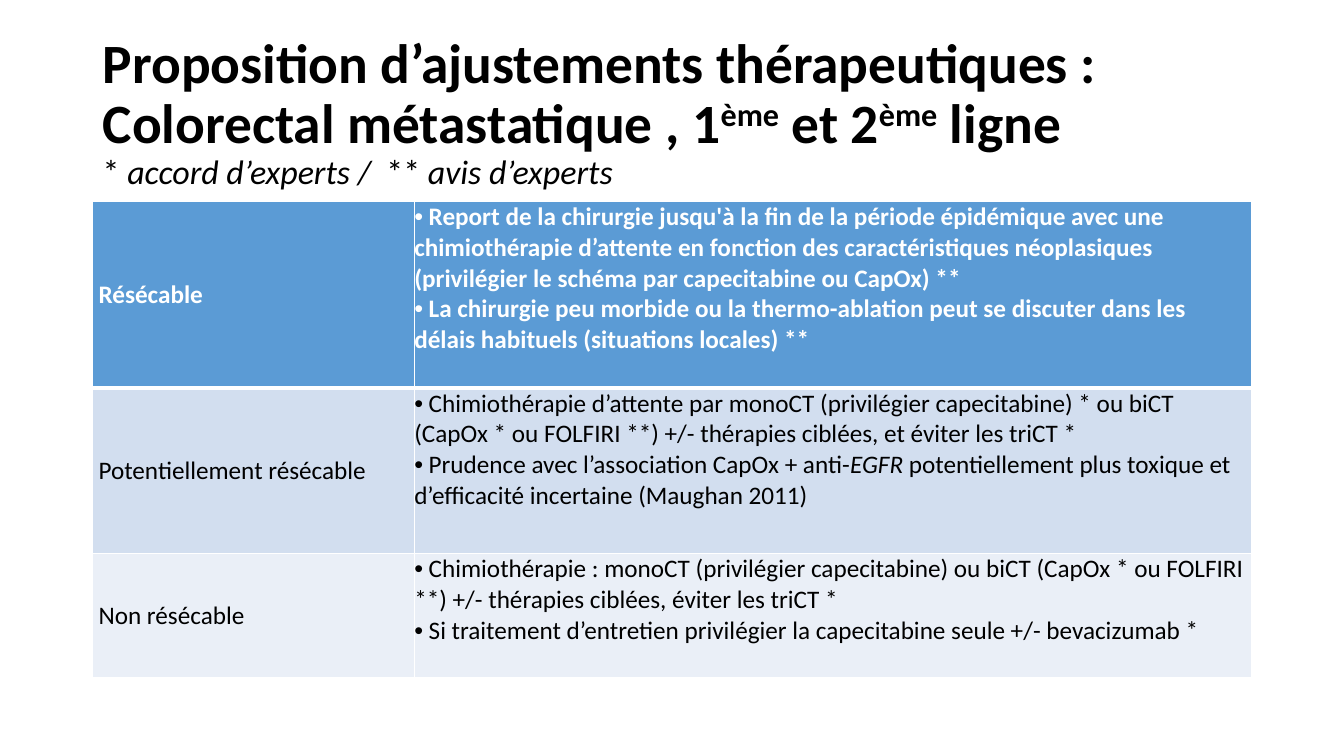
"""Build the slide on treatment adjustments for metastatic colorectal cancer."""
from lxml.etree import SubElement
from pptx import Presentation
from pptx.dml.color import RGBColor
from pptx.enum.text import MSO_ANCHOR as Anchor
from pptx.oxml.ns import qn
from pptx.util import Cm, Pt

FONT = "Calibri"
BLACK = RGBColor(0x00, 0x00, 0x00)
WHITE = RGBColor(0xFF, 0xFF, 0xFF)
BLUE = RGBColor(0x5B, 0x9B, 0xD5)
LIGHT_BLUE = RGBColor(0xD2, 0xDE, 0xEF)
PALE_BLUE = RGBColor(0xEA, 0xEF, 0xF7)

PLAIN, SUPER, ITALIC = "plain", "super", "italic"

TITLE = [
    (39.6, True, [("Proposition d’ajustements thérapeutiques :", PLAIN)]),
    (39.6, True, [("Colorectal métastatique , 1", PLAIN), ("ème", SUPER),
                  (" et 2", PLAIN), ("ème", SUPER), (" ligne", PLAIN)]),
    (24.3, False, [("* ", PLAIN), ("accord d’experts /  ", ITALIC),
                   ("** ", PLAIN), ("avis d’experts", ITALIC)]),
]

SITUATIONS = [
    (" Résécable", [
        [(" Report de la chirurgie jusqu'à la fin de la période épidémique avec une "
          "chimiothérapie d’attente en fonction des caractéristiques néoplasiques "
          "(privilégier le schéma par capecitabine ou CapOx) **", PLAIN)],
        [(" La chirurgie peu morbide ou la thermo-ablation peut se discuter dans les "
          "délais habituels (situations locales) **", PLAIN)],
    ]),
    (" Potentiellement résécable", [
        [(" Chimiothérapie d’attente par monoCT (privilégier capecitabine) * ou biCT "
          "(CapOx * ou FOLFIRI **) +/- thérapies ciblées, et éviter les triCT *", PLAIN)],
        [(" Prudence avec l’association CapOx + anti-", PLAIN), ("EGFR", ITALIC),
         (" potentiellement plus toxique et d’efficacité incertaine (Maughan 2011)", PLAIN)],
    ]),
    (" Non résécable", [
        [(" Chimiothérapie : monoCT (privilégier capecitabine) ou biCT (CapOx * ou FOLFIRI "
          "**) +/- thérapies ciblées, éviter les triCT *", PLAIN)],
        [(" Si traitement d’entretien privilégier la capecitabine seule +/- bevacizumab *",
          PLAIN)],
    ]),
]
ROW_LOOKS = [(BLUE, WHITE, True), (LIGHT_BLUE, BLACK, False), (PALE_BLUE, BLACK, False)]

LEFT = Cm(2.34)
COLUMN_WIDTHS = [Cm(8.1), Cm(21.11)]
ROW_HEIGHTS = [Cm(4.7), Cm(4.17), Cm(3.12)]


def write_paragraphs(frame, paragraphs, bulleted=False, spacing=None):
    """Fill a text frame with (size, bold, colour, runs) paragraphs."""
    for index, (size, bold, colour, runs) in enumerate(paragraphs):
        paragraph = frame.add_paragraph() if index else frame.paragraphs[0]
        if spacing:
            paragraph.line_spacing = spacing
        if bulleted:
            properties = paragraph._p.get_or_add_pPr()
            properties.set("marL", "0")
            properties.set("indent", "0")
            SubElement(properties, qn("a:buFont"), typeface="Arial")
            SubElement(properties, qn("a:buChar"), char="•")
        font = paragraph.font
        font.name, font.size, font.bold = FONT, Pt(size), bold
        font.color.rgb = colour
        for text, mark in runs:
            run = paragraph.add_run()
            run.text = text
            if mark == ITALIC:
                run.font.italic = True
            elif mark == SUPER:
                run.font._element.set("baseline", "30000")


def draw_borders(cell, widths):
    """Give a cell white borders, with widths in points by side."""
    properties = cell._tc.get_or_add_tcPr()
    for side, width in widths.items():
        line = SubElement(properties, qn(f"a:ln{side}"), w=str(Pt(width)))
        SubElement(SubElement(line, qn("a:solidFill")), qn("a:srgbClr"), val=str(WHITE))


def add_title(slide):
    """Add the three-line heading."""
    frame = slide.shapes.add_textbox(LEFT, Cm(1.02), Cm(26.16), Cm(3.68)).text_frame
    frame.word_wrap = True
    frame.vertical_anchor = Anchor.MIDDLE
    write_paragraphs(frame, [(size, bold, BLACK, runs) for size, bold, runs in TITLE],
                     spacing=0.9)


def add_situations(slide):
    """Add the table of situations and their adjustments."""
    table = slide.shapes.add_table(
        len(SITUATIONS), len(COLUMN_WIDTHS), LEFT, Cm(5.08),
        sum(COLUMN_WIDTHS), sum(ROW_HEIGHTS)).table
    for column, width in zip(table.columns, COLUMN_WIDTHS):
        column.width = width
    for index, (situation, adjustments) in enumerate(SITUATIONS):
        table.rows[index].height = ROW_HEIGHTS[index]
        fill, colour, bold = ROW_LOOKS[index]
        borders = {"L": 1, "R": 1, "T": 3 if index == 1 else 1, "B": 3 if index == 0 else 1}
        columns = [([[(situation, PLAIN)]], Anchor.MIDDLE, False),
                   (adjustments, Anchor.TOP, True)]
        for cell, (lines, anchor, bulleted) in zip(table.rows[index].cells, columns):
            cell.margin_left = cell.margin_right = cell.margin_top = cell.margin_bottom = 0
            cell.vertical_anchor = anchor
            draw_borders(cell, borders)
            cell.fill.solid()
            cell.fill.fore_color.rgb = fill
            write_paragraphs(cell.text_frame, [(18, bold, colour, runs) for runs in lines],
                             bulleted)


def main():
    """Build and save the presentation."""
    deck = Presentation()
    deck.slide_width, deck.slide_height = Cm(33.87), Cm(19.05)
    slide = deck.slides.add_slide(deck.slide_layouts[6])
    add_title(slide)
    add_situations(slide)
    deck.save("out.pptx")


if __name__ == "__main__":
    main()
